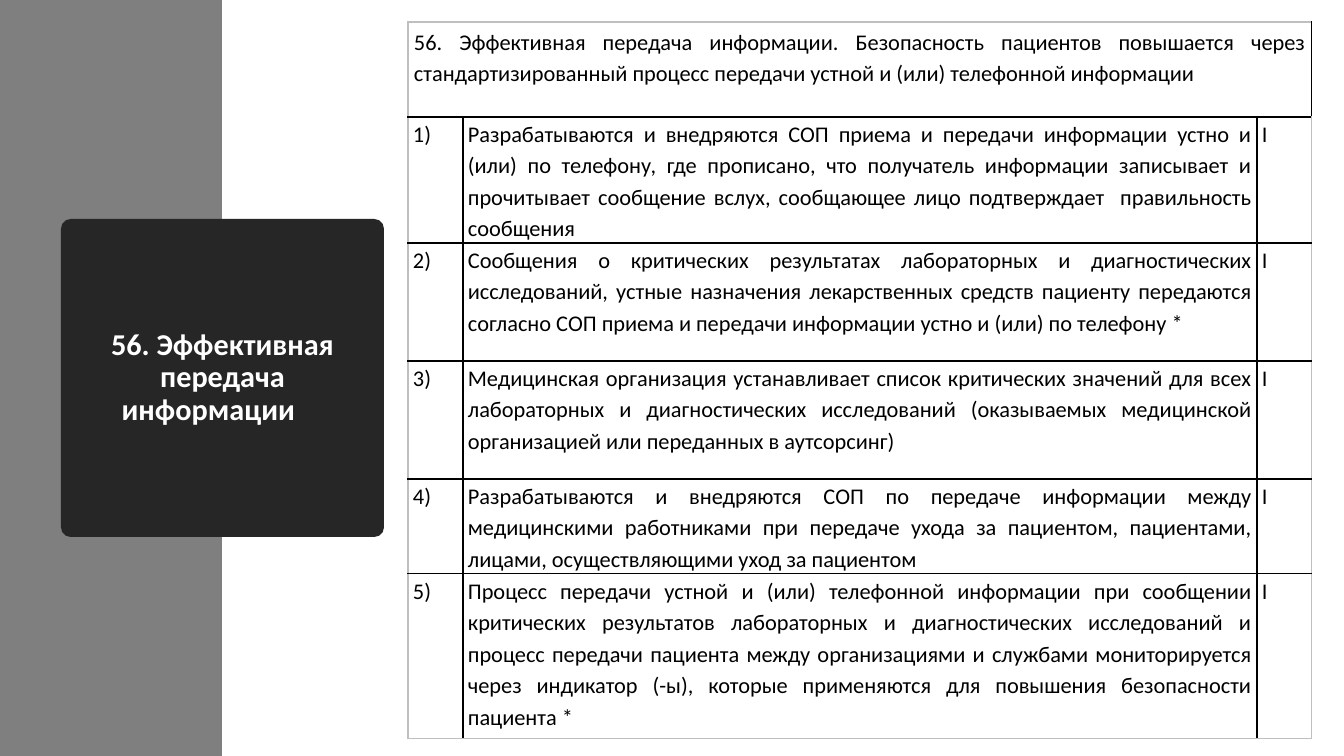
from lxml.etree import SubElement
from pptx import Presentation
from pptx.dml.color import RGBColor
from pptx.enum.shapes import MSO_SHAPE
from pptx.enum.text import MSO_ANCHOR, PP_ALIGN
from pptx.oxml.ns import qn
from pptx.util import Emu, Pt

SCALE = 914400 / 100.8
COLORS = {"band": "7F7F7F", "card": "262626", "white": "FFFFFF",
          "ink": "000000", "edge": "BFBFBF"}
COLS = [55, 794, 55]
ROWS = [95, 126, 118, 118, 95, 165]
HEAD = ("56. Эффективная передача информации. Безопасность пациентов повышается через "
        "стандартизированный процесс передачи устной и (или) телефонной информации")
ITEMS = [
    "Разрабатываются и внедряются СОП приема и передачи информации устно и (или) "
    "по телефону, где прописано, что получатель информации записывает и прочитывает "
    "сообщение вслух, сообщающее лицо подтверждает  правильность сообщения",
    "Сообщения о критических результатах лабораторных и диагностических исследований, "
    "устные назначения лекарственных средств пациенту передаются согласно СОП приема "
    "и передачи информации устно и (или) по телефону *",
    "Медицинская организация устанавливает список критических значений для всех "
    "лабораторных и диагностических исследований (оказываемых медицинской "
    "организацией или переданных в аутсорсинг)",
    "Разрабатываются и внедряются СОП по передаче информации между медицинскими "
    "работниками при передаче ухода за пациентом, пациентами, лицами, "
    "осуществляющими уход за пациентом",
    "Процесс передачи устной и (или) телефонной информации при сообщении критических "
    "результатов лабораторных и диагностических исследований и процесс передачи "
    "пациента между организациями и службами мониторируется через индикатор (-ы), "
    "которые применяются для повышения безопасности пациента *",
]


def px(n):
    """Turn pixels into EMU."""
    return Emu(round(n * SCALE))


def rgb(name):
    """Look up a colour by name."""
    return RGBColor.from_string(COLORS[name])


def write(frame, text, size=16, color="ink", bold=False,
          align=PP_ALIGN.JUSTIFY, space=1.15):
    """Fill a text frame with one formatted paragraph."""
    frame.word_wrap = True
    para = frame.paragraphs[0]
    para.alignment = align
    para.line_spacing = space
    run = para.add_run()
    run.text = text
    font = run.font
    font.name, font.size, font.bold = "Calibri", Pt(size), bold
    font.color.rgb = rgb(color)


def block(slide, box, kind, color):
    """Draw a plain filled shape in the box."""
    shape = slide.shapes.add_shape(kind, *map(px, box))
    shape.shadow.inherit = False
    shape.fill.solid()
    shape.fill.fore_color.rgb = rgb(color)
    shape.line.fill.background()
    return shape


def card(slide, box):
    """Draw the dark title card."""
    shape = block(slide, box, MSO_SHAPE.ROUNDED_RECTANGLE, "card")
    shape.adjustments[0] = 0.03
    frame = shape.text_frame
    frame.margin_left = frame.margin_right = px(19)
    frame.vertical_anchor = MSO_ANCHOR.MIDDLE
    write(frame, "56. Эффективная передача информации \t", size=21.6, color="white",
          bold=True, align=PP_ALIGN.CENTER, space=0.9)


def border(cell, sides):
    """Set the colour of each cell side, in the order left, right, top, bottom."""
    props = cell._tc.get_or_add_tcPr()
    for at, (tag, color) in enumerate(zip(("lnL", "lnR", "lnT", "lnB"), sides)):
        line = props.makeelement(qn(f"a:{tag}"), {"w": str(Pt(1))})
        fill = SubElement(line, qn("a:solidFill"))
        SubElement(fill, qn("a:srgbClr"), val=COLORS[color])
        props.insert(at, line)


def grid(slide, box):
    """Build the table of standards in the box."""
    table = slide.shapes.add_table(len(ROWS), len(COLS), *map(px, box)).table
    table.first_row = table.horz_banding = False
    for col, width in zip(table.columns, COLS):
        col.width = px(width)
    for row, height in zip(table.rows, ROWS):
        row.height = px(height)
    table.cell(0, 0).merge(table.cell(0, len(COLS) - 1))
    texts = [[HEAD, "", ""]]
    texts += [[f"{n})", item, "I"] for n, item in enumerate(ITEMS, 1)]
    for r, line in enumerate(texts):
        for c, text in enumerate(line):
            cell = table.cell(r, c)
            cell.fill.background()
            outer = (c == 0, c == len(COLS) - 1, r == 0, r == len(ROWS) - 1)
            border(cell, ["edge" if out else "ink" for out in outer])
            cell.margin_left = cell.margin_right = px(5 if r else 6)
            cell.margin_top = cell.margin_bottom = px(0 if r else 3)
            if text:
                write(cell.text_frame, text)


def main():
    """Build and save the slide."""
    deck = Presentation()
    deck.slide_width, deck.slide_height = px(1344), px(756)
    slide = deck.slides.add_slide(deck.slide_layouts[6])
    block(slide, (0, 0, 222, 756), MSO_SHAPE.RECTANGLE, "band")
    card(slide, (61, 219, 323, 318))
    grid(slide, (408, 22, sum(COLS), sum(ROWS)))
    deck.save("out.pptx")


if __name__ == "__main__":
    main()
